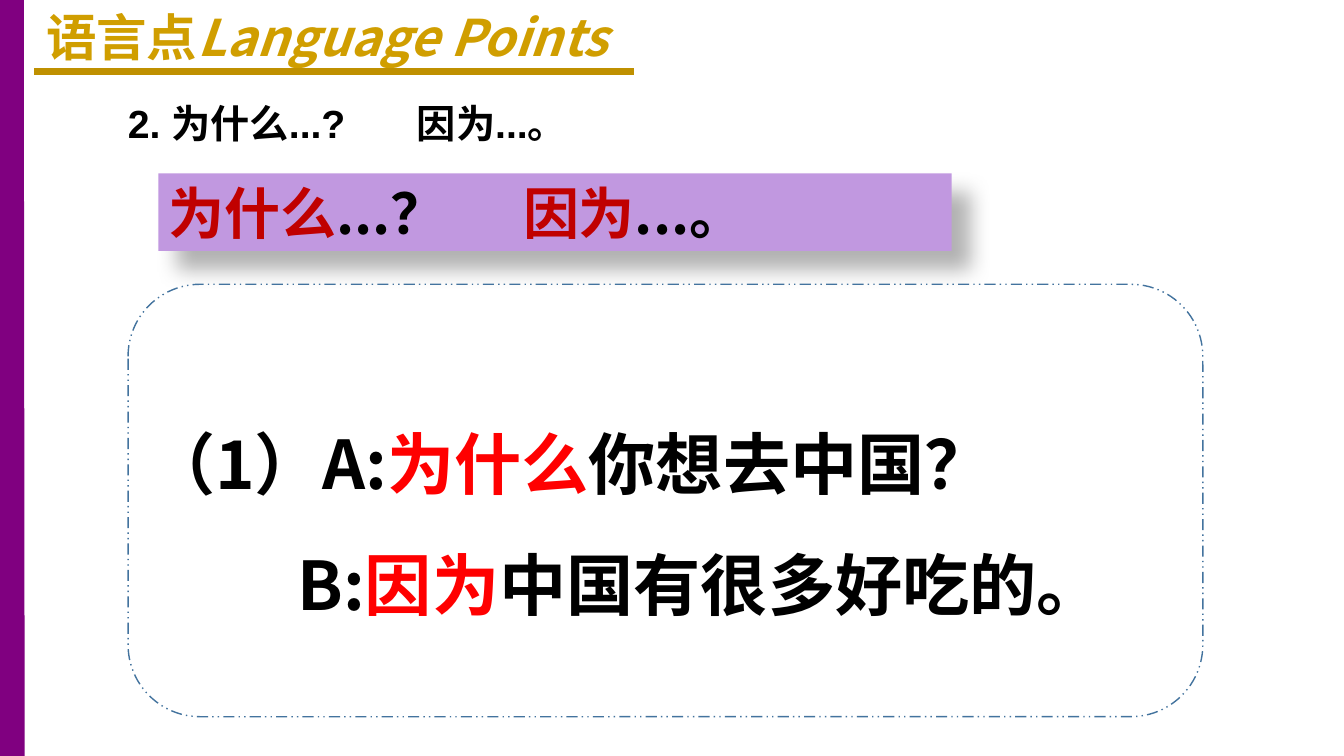
import pptx
import pptx.util
import pptx.dml.color
import pptx.enum.dml
import pptx.enum.shapes
import pptx.enum.text
import pptx.oxml
import pptx.oxml.ns
from lxml import etree

RGB = pptx.dml.color.RGBColor
BLACK = RGB(0x00, 0x00, 0x00)
PURPLE = RGB(0x80, 0x00, 0x80)
LILAC = RGB(0xC1, 0x98, 0xE0)
GOLD = RGB(0xD0, 0x9E, 0x00)
OCHRE = RGB(0xBF, 0x90, 0x00)
CRIMSON = RGB(0xC0, 0x00, 0x00)
RED = RGB(0xFF, 0x00, 0x00)
BLUE = RGB(0x43, 0x73, 0x9E)

WIDTH = pptx.util.Inches(13.33)
HEIGHT = pptx.util.Inches(7.5)
SANS = "Noto Sans CJK SC"
KIND = pptx.enum.shapes.MSO_SHAPE
SHADOW = (
    '<a:effectLst xmlns:a="http://schemas.openxmlformats.org/drawingml/2006/main">'
    '<a:outerShdw blurRad="190500" dist="228600" dir="2700000" algn="tl" rotWithShape="0">'
    '<a:srgbClr val="000000"><a:alpha val="30000"/></a:srgbClr>'
    '</a:outerShdw></a:effectLst>'
)


def col(share):
    return round(WIDTH * share / 100)


def row(share):
    return round(HEIGHT * share / 100)


def place(left, top, wide, high):
    return col(left), row(top), col(wide), row(high)


def tag(parent, name, **values):
    node = etree.SubElement(parent, pptx.oxml.ns.qn(name))
    for key, value in values.items():
        node.set(key, str(value))
    return node


def add_line(shapes, start, end, color, weight):
    line = shapes.add_connector(
        pptx.enum.shapes.MSO_CONNECTOR.STRAIGHT,
        col(start[0]), row(start[1]), col(end[0]), row(end[1]))
    line.line.color.rgb = color
    line.line.width = pptx.util.Pt(weight)
    tag(line._element.spPr, "a:effectLst")


def add_shape(shapes, kind, area):
    shape = shapes.add_shape(kind, *place(*area))
    shape.shadow.inherit = False
    return shape


def set_frame(shape, wrap=True):
    frame = shape.text_frame
    frame.word_wrap = wrap
    frame.auto_size = pptx.enum.text.MSO_AUTO_SIZE.SHAPE_TO_FIT_TEXT
    return frame


def fill_par(par, parts, size, face=SANS, stop=None, indent=None, space=None):
    par.alignment = pptx.enum.text.PP_ALIGN.LEFT
    props = par._p.get_or_add_pPr()
    if space:
        par.line_spacing = space
    if indent:
        props.set("marL", str(col(indent)))
        props.set("indent", "0")
    if stop:
        tabs = tag(props, "a:tabLst")
        tag(tabs, "a:tab", pos=col(stop), algn="l")
    par.font.size = pptx.util.Pt(size)
    par.font.bold = True
    par.font.name = face
    tag(par.font._element, "a:ea", typeface=SANS)
    for text, color in parts:
        run = par.add_run()
        run.text = text
        run.font.color.rgb = color


def add_title(shapes):
    group = shapes.add_group_shape().shapes
    box = group.add_textbox(*place(2.7, 0.13, 44.49, 9.47))
    par = set_frame(box, False).paragraphs[0]
    fill_par(par, [("语言点", GOLD), ("Language Points", GOLD)], 36)
    par.runs[1].font.italic = True
    add_line(group, (2.55, 9.47), (47.19, 9.47), OCHRE, 5.5)


def add_topic(shapes):
    box = shapes.add_textbox(*place(8.78, 12.53, 81.47, 7.6))
    par = set_frame(box).paragraphs[0]
    fill_par(par, [("2. 为什么...?\t因为...。", BLACK)], 28, "Arial", stop=21.5)


def add_banner(shapes):
    banner = add_shape(shapes, KIND.RECTANGLE, (11.78, 22.93, 59.04, 10.27))
    banner.fill.solid()
    banner.fill.fore_color.rgb = LILAC
    banner.line.fill.background()
    props = banner._element.spPr
    props.replace(props.find(pptx.oxml.ns.qn("a:effectLst")),
                  pptx.oxml.parse_xml(SHADOW))
    parts = [("为什么", CRIMSON), ("...？\t", BLACK),
             ("因为", CRIMSON), ("...。", BLACK)]
    fill_par(set_frame(banner).paragraphs[0], parts, 40, stop=26.4)


def add_border(shapes):
    border = add_shape(shapes, KIND.ROUNDED_RECTANGLE, (9.53, 37.6, 79.97, 57.2))
    border.fill.background()
    border.line.color.rgb = BLUE
    border.line.width = pptx.util.Pt(1)
    border.line.dash_style = pptx.enum.dml.MSO_LINE.DASH_DOT_DOT


def add_dialog(shapes):
    box = shapes.add_textbox(*place(10.28, 49.87, 78.62, 32.13))
    frame = set_frame(box)
    ask = [("（1）A:", BLACK), ("为什么", RED), ("你想去中国？", BLACK)]
    reply = [("B:", BLACK), ("因为", RED), ("中国有很多好吃的。", BLACK)]
    fill_par(frame.paragraphs[0], ask, 48, space=1.5)
    fill_par(frame.add_paragraph(), reply, 48, indent=11.1, space=1.5)


def main():
    deck = pptx.Presentation()
    deck.slide_width = WIDTH
    deck.slide_height = HEIGHT
    shapes = deck.slides.add_slide(deck.slide_layouts[6]).shapes
    add_line(shapes, (0.9, 100), (0.83, 0), PURPLE, 18)
    add_title(shapes)
    add_topic(shapes)
    add_banner(shapes)
    add_border(shapes)
    add_dialog(shapes)
    deck.save("out.pptx")


if __name__ == "__main__":
    main()
